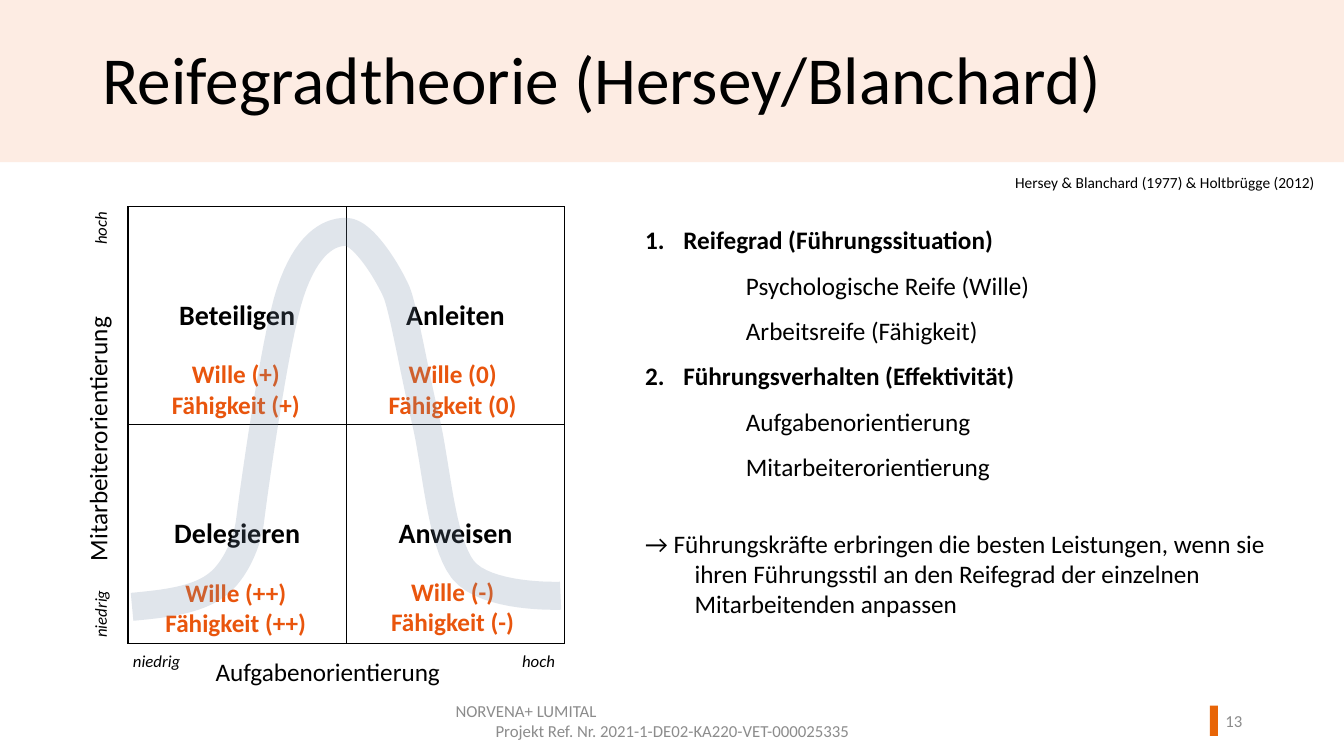
from dataclasses import dataclass

from lxml.etree import SubElement
from pptx import Presentation
from pptx.dml.color import RGBColor
from pptx.enum.shapes import MSO_SHAPE as Preset
from pptx.enum.text import MSO_ANCHOR as Anchor, PP_ALIGN as Align
from pptx.oxml.ns import qn
from pptx.util import Pt

EMU_PER_PX = 9144  # 100 px to the inch
FONT = "Calibri"
BLACK, GREY, ORANGE = "000000", "8C8C8C", "E9550D"
BAND_FILL, MARKER_FILL, CURVE_COLOR = "FDECE3", "E86507", "7489A6"
CURVE_STEPS = 16


@dataclass
class Line:
    text: str
    align: Align = Align.LEFT
    bold: bool = False
    spacing: float = 1.0
    before: int = 0  # points
    margin: int = 0  # px
    indent: int = 0  # px
    number: int = 0  # automatic number, 0 for none


@dataclass
class Label:
    left: int
    top: int
    width: int
    height: int
    lines: list[Line]
    size: int = 18
    color: str = BLACK
    italic: bool = False
    rotation: int = 0
    anchor: Anchor = Anchor.TOP


def px(value: float) -> int:
    return round(value * EMU_PER_PX)


def rgb(color: str) -> RGBColor:
    return RGBColor.from_string(color)


def write_line(paragraph, line: Line, size: int, color: str, italic: bool = False) -> None:
    paragraph.alignment = line.align
    paragraph.line_spacing = line.spacing
    paragraph.space_before = Pt(line.before)
    properties = paragraph._p.get_or_add_pPr()
    properties.set("marL", str(px(line.margin)))
    properties.set("indent", str(px(line.indent)))
    if line.number:
        SubElement(properties, qn("a:buFont"), typeface="+mj-lt")
        SubElement(properties, qn("a:buAutoNum"), type="arabicPeriod", startAt=str(line.number))
    run = paragraph.add_run()
    run.text = line.text
    run.font.name = FONT
    run.font.size = Pt(size)
    run.font.bold = line.bold
    run.font.italic = italic
    run.font.color.rgb = rgb(color)


def add_label(slide, label: Label) -> None:
    box = slide.shapes.add_textbox(px(label.left), px(label.top), px(label.width), px(label.height))
    box.rotation = label.rotation
    frame = box.text_frame
    frame.word_wrap = True
    frame.vertical_anchor = label.anchor
    for index, line in enumerate(label.lines):
        paragraph = frame.add_paragraph() if index else frame.paragraphs[0]
        write_line(paragraph, line, label.size, label.color, label.italic)


def add_block(slide, left: int, top: int, width: int, height: int, color: str) -> None:
    block = slide.shapes.add_shape(Preset.RECTANGLE, px(left), px(top), px(width), px(height))
    block.shadow.inherit = False
    block.fill.solid()
    block.fill.fore_color.rgb = rgb(color)
    block.line.fill.background()


def add_cell_borders(cell) -> None:
    properties = cell._tc.get_or_add_tcPr()
    for position, side in enumerate(("lnL", "lnR", "lnT", "lnB")):
        border = SubElement(properties, qn(f"a:{side}"), w=str(Pt(1)))
        fill = SubElement(border, qn("a:solidFill"))
        SubElement(fill, qn("a:srgbClr"), val=BLACK)
        properties.insert(position, border)


def add_matrix(slide, left: int, top: int, side: int, names: list[list[str]]) -> None:
    count = len(names)
    graphic = slide.shapes.add_table(count, count, px(left), px(top), px(side), px(side))
    table = graphic.table
    table.first_row = table.horz_banding = False
    for row, row_names in enumerate(names):
        table.rows[row].height = table.columns[row].width = px(side / count)
        for column, name in enumerate(row_names):
            cell = table.cell(row, column)
            cell.fill.background()
            cell.vertical_anchor = Anchor.MIDDLE
            write_line(cell.text_frame.paragraphs[0], Line(name, Align.CENTER, True), 20, BLACK)
            add_cell_borders(cell)


Point = tuple[int, int]


def bezier(points: tuple[Point, ...], t: float) -> Point:
    weights = ((1 - t) ** 3, 3 * t * (1 - t) ** 2, 3 * t * t * (1 - t), t ** 3)
    x, y = (px(sum(w * p[axis] for w, p in zip(weights, points))) for axis in (0, 1))
    return x, y


def add_curve(slide, knots: list[Point]) -> None:
    start = knots[0]
    builder = slide.shapes.build_freeform(px(start[0]), px(start[1]), scale=1.0)
    for first in range(0, len(knots) - 1, 3):
        segment = tuple(knots[first:first + 4])
        steps = range(1, CURVE_STEPS + 1)
        builder.add_line_segments([bezier(segment, s / CURVE_STEPS) for s in steps], close=False)
    curve = builder.convert_to_shape()
    curve.shadow.inherit = False
    curve.fill.background()
    curve.line.width = Pt(20)
    curve.line.color.rgb = rgb(CURVE_COLOR)
    color = curve.line._ln.find(f".//{qn('a:srgbClr')}")
    SubElement(color, qn("a:alpha"), val="22000")


def heading(text: str, number: int) -> Line:
    return Line(text, bold=True, spacing=1.5, margin=38, indent=-38, number=number)


def detail(text: str) -> Line:
    return Line(text, spacing=1.5, margin=100)


def maturity(left: int, top: int, level: str) -> Label:
    lines = [Line(f"{word} ({level})", Align.CENTER, True) for word in ("Wille", "Fähigkeit")]
    return Label(left, top, 196, 71, lines, color=ORANGE)


def axis_end(left: int, top: int, width: int, text: str, rotation: int = 0) -> Label:
    return Label(left, top, width, 30, [Line(text)], 12, italic=True, rotation=rotation)


TITLE = Label(92, 41, 1117, 85, [Line("Reifegradtheorie (Hersey/Blanchard)", spacing=0.9)], 48)
EXPLANATION = Label(630, 203, 677, 419, [
    heading("Reifegrad (Führungssituation)", 1),
    detail("Psychologische Reife (Wille)"),
    detail("Arbeitsreife (Fähigkeit)"),
    heading("Führungsverhalten (Effektivität)", 2),
    detail("Aufgabenorientierung"),
    detail("Mitarbeiterorientierung"),
    Line("→ Führungskräfte erbringen die besten Leistungen, wenn sie ihren Führungsstil "
         "an den Reifegrad der einzelnen Mitarbeitenden anpassen",
         before=33, margin=49, indent=-49),
])
MATRIX_LABELS = [
    Label(-49, 401, 291, 40, [Line("Mitarbeiterorientierung")], rotation=270),
    Label(204, 646, 278, 40, [Line("Aufgabenorientierung")]),
    maturity(136, 568, "++"),
    maturity(136, 351, "+"),
    maturity(351, 351, "0"),
    maturity(351, 567, "-"),
    axis_end(70, 208, 59, "hoch", 270),
    axis_end(62, 590, 75, "niedrig", 270),
    axis_end(122, 641, 75, "niedrig"),
    axis_end(508, 641, 58, "hoch"),
]
FOOTER_LABELS = [
    Label(442, 695, 450, 40, [
        Line("NORVENA+ LUMITAL"),
        Line("Projekt Ref. Nr. 2021-1-DE02-KA220-VET-000025335", Align.CENTER),
    ], 12, GREY, anchor=Anchor.MIDDLE),
    Label(1177, 695, 65, 40, [Line("13", Align.RIGHT)], 12, GREY, anchor=Anchor.MIDDLE),
    Label(997, 167, 336, 29, [Line("Hersey & Blanchard (1977) & Holtbrügge (2012)")], 11),
]
# Start point, then two control points and an end point per segment
CURVE_KNOTS = [
    (131, 602), (165, 599), (195, 595), (214, 581), (234, 567), (246, 535), (248, 517),
    (250, 500), (272, 338), (288, 290), (304, 242), (326, 230), (343, 230),
    (361, 230), (386, 273), (393, 289), (400, 305), (411, 370), (422, 416),
    (433, 462), (437, 536), (459, 565), (482, 594), (556, 591), (556, 591),
]


def main() -> None:
    presentation = Presentation()
    presentation.slide_width, presentation.slide_height = px(1333), px(750)
    slide = presentation.slides.add_slide(presentation.slide_layouts[6])
    # Title band and page marker
    add_block(slide, 0, 0, 1333, 161, BAND_FILL)
    add_block(slide, 1200, 700, 8, 30, MARKER_FILL)
    # Matrix with its text, then the curve over it
    add_matrix(slide, 127, 205, 433, [["Beteiligen", "Anleiten"], ["Delegieren", "Anweisen"]])
    for label in [TITLE, EXPLANATION, *MATRIX_LABELS]:
        add_label(slide, label)
    add_curve(slide, CURVE_KNOTS)
    # Footer and source
    for label in FOOTER_LABELS:
        add_label(slide, label)
    presentation.save("out.pptx")


if __name__ == "__main__":
    main()
